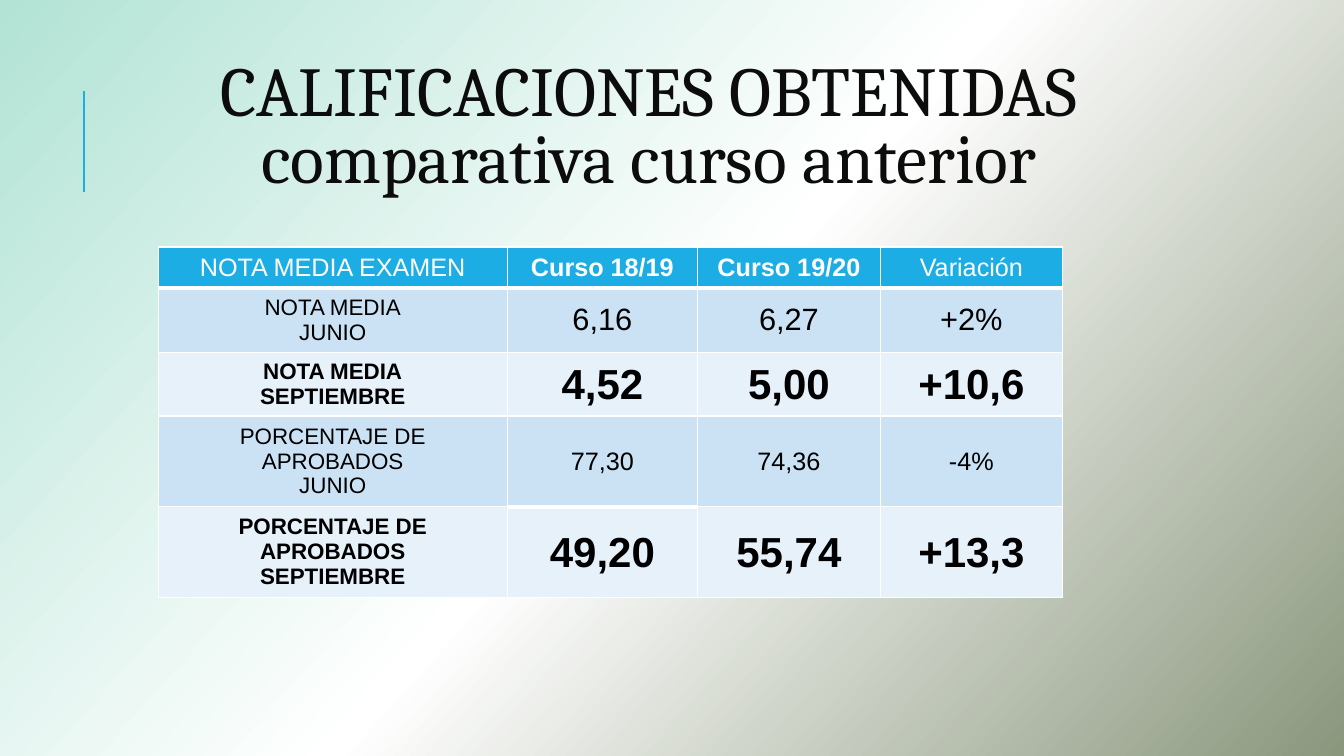
"""Build the slide comparing this year's exam results with the previous year's."""
from copy import deepcopy

from lxml.etree import SubElement
from pptx import Presentation
from pptx.dml.color import RGBColor
from pptx.enum.shapes import MSO_CONNECTOR
from pptx.enum.text import MSO_ANCHOR, PP_ALIGN
from pptx.oxml.ns import qn
from pptx.util import Inches, Pt

MINT = RGBColor(0xB2, 0xE3, 0xD5)
WHITE = RGBColor(0xFF, 0xFF, 0xFF)
OLIVE = RGBColor(0x8A, 0x97, 0x7D)
BLUE = RGBColor(0x1C, 0xAD, 0xE4)
LIGHT_BLUE = RGBColor(0xCB, 0xE2, 0xF5)
PALE_BLUE = RGBColor(0xE7, 0xF1, 0xFA)
BLACK = RGBColor(0, 0, 0)
TITLE_INK = RGBColor(0x0C, 0x0C, 0x0C)

TITLE = "CALIFICACIONES OBTENIDAS\ncomparativa curso anterior"
COLUMN_WIDTHS = [3.46, 1.89, 1.81, 1.81]
# Row height, fill, text colour, label size, value size, bold columns, texts
ROWS = [
    (0.41, BLUE, WHITE, 18, 18, {1, 2},
     ["NOTA MEDIA EXAMEN", "Curso 18/19", "Curso 19/20", "Variación"]),
    (0.59, LIGHT_BLUE, BLACK, 16, 22, set(),
     ["NOTA MEDIA\nJUNIO", "6,16", "6,27", "+2%"]),
    (0.59, PALE_BLUE, BLACK, 16, 30, {0, 1, 2, 3},
     ["NOTA MEDIA\nSEPTIEMBRE", "4,52", "5,00", "+10,6"]),
    (0.84, LIGHT_BLUE, BLACK, 16, 18, set(),
     ["PORCENTAJE DE APROBADOS\nJUNIO", "77,30", "74,36", "-4%"]),
    (0.84, PALE_BLUE, BLACK, 16, 30, {0, 1, 2, 3},
     ["PORCENTAJE DE APROBADOS\nSEPTIEMBRE", "49,20", "55,74", "+13,3"]),
]
THICK_BOTTOMS = {(0, 0), (0, 1), (0, 2), (0, 3), (3, 1)}


def add_borders(cell, widths):
    """Draw white borders on a cell, given the width in points of each side."""
    properties = cell._tc.get_or_add_tcPr()
    for side, width in widths.items():
        line = SubElement(properties, qn(f"a:ln{side}"), w=str(Pt(width)))
        fill = SubElement(line, qn("a:solidFill"))
        SubElement(fill, qn("a:srgbClr"), val=str(WHITE))


presentation = Presentation()
presentation.slide_width = Inches(13.33)
presentation.slide_height = Inches(7.5)
slide = presentation.slides.add_slide(presentation.slide_layouts[6])

background = slide.background.fill
background.gradient()
background.gradient_angle = 360 - 42
stop_list = slide.element.find(".//" + qn("a:gsLst"))
stop_list.append(deepcopy(stop_list[0]))
for stop, position, color in zip(background.gradient_stops, (0, 0.5, 1), (MINT, WHITE, OLIVE)):
    stop.position = position
    stop.color.rgb = color

accent = slide.shapes.add_connector(
    MSO_CONNECTOR.STRAIGHT, Inches(0.83), Inches(1.9), Inches(0.83), Inches(0.9))
accent.line.color.rgb = BLUE
accent.line.width = Pt(1.5)
SubElement(accent._element.spPr, qn("a:effectLst"))

title_box = slide.shapes.add_textbox(Inches(1.12), Inches(0.47), Inches(10.63), Inches(1.64))
title_frame = title_box.text_frame
title_frame.word_wrap = True
title_frame.vertical_anchor = MSO_ANCHOR.MIDDLE
title_frame.text = TITLE
for paragraph in title_frame.paragraphs:
    paragraph.alignment = PP_ALIGN.CENTER
    paragraph.line_spacing = 0.8
    paragraph.font.name = "Cambria"
    paragraph.font.size = Pt(50)
    paragraph.font.color.rgb = TITLE_INK

table = slide.shapes.add_table(
    len(ROWS), len(COLUMN_WIDTHS), Inches(1.57), Inches(2.45),
    Inches(sum(COLUMN_WIDTHS)), Inches(sum(row[0] for row in ROWS))).table
for column, width in zip(table.columns, COLUMN_WIDTHS):
    column.width = Inches(width)

for row_index, (height, fill, ink, label_size, value_size, bold_columns, texts) in enumerate(ROWS):
    table.rows[row_index].height = Inches(height)
    for column_index, text in enumerate(texts):
        cell = table.cell(row_index, column_index)
        add_borders(cell, {
            "L": 1,
            "R": 1,
            "T": 3 if (row_index - 1, column_index) in THICK_BOTTOMS else 1,
            "B": 3 if (row_index, column_index) in THICK_BOTTOMS else 1,
        })
        cell.fill.solid()
        cell.fill.fore_color.rgb = fill
        cell.vertical_anchor = MSO_ANCHOR.MIDDLE
        if value_size == 30 and column_index > 0:
            cell.margin_left = cell.margin_right = cell.margin_top = Inches(0.01)
            cell.margin_bottom = 0
        cell.text = text
        for paragraph in cell.text_frame.paragraphs:
            paragraph.alignment = PP_ALIGN.CENTER
            paragraph.font.name = "Arial"
            paragraph.font.size = Pt(value_size if column_index else label_size)
            paragraph.font.bold = column_index in bold_columns
            paragraph.font.color.rgb = ink

presentation.save("out.pptx")
